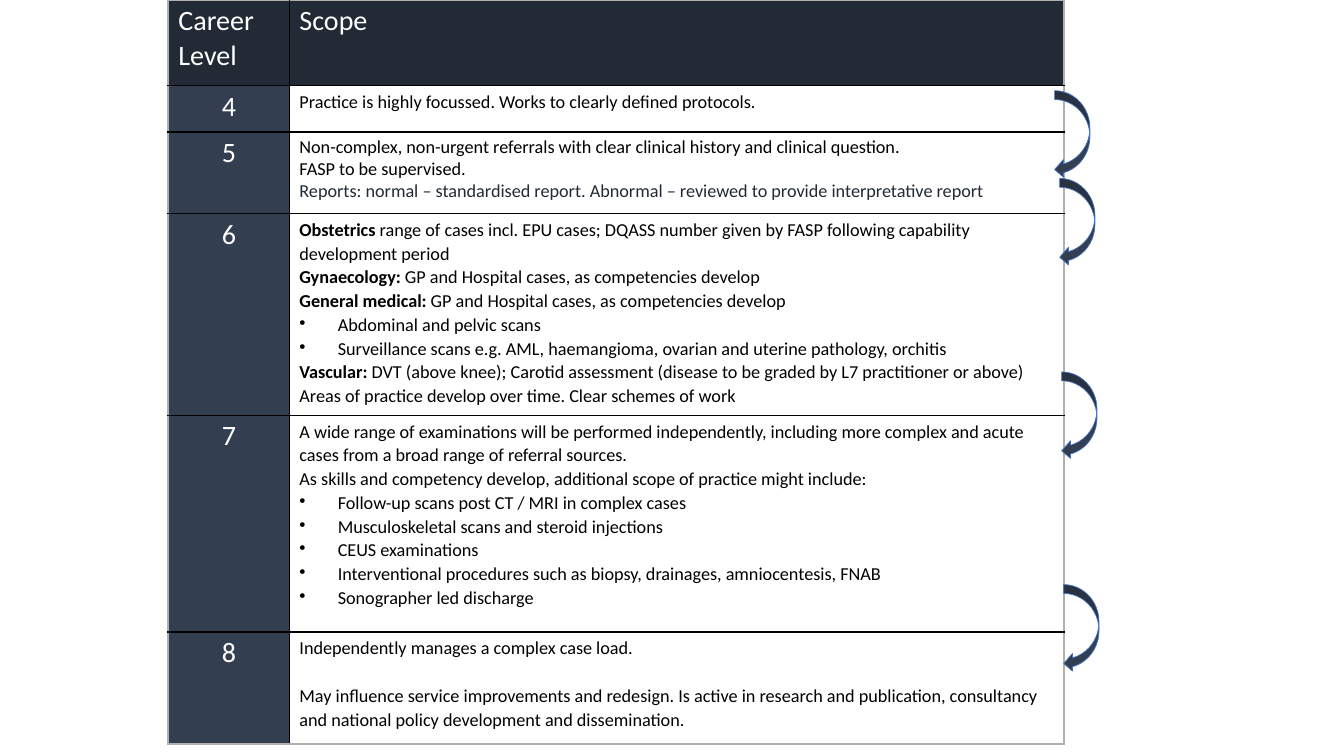
"""Build the sonographer career level and scope slide."""
from lxml import etree
from pptx import Presentation
from pptx.dml.color import RGBColor
from pptx.enum.shapes import MSO_SHAPE
from pptx.enum.text import PP_ALIGN
from pptx.oxml.ns import qn
from pptx.util import Inches, Pt

FONT, HEAD_SIZE, BODY_SIZE = "Calibri", 20, 13
HEADER, LEVEL, FRAME, RULE = "222A35", "333F50", "B0B0B0", "000000"
WHITE, BLACK, ARROW_LINE = "FFFFFF", "000000", "4472C4"
PLAIN, BULLET, TINTED, SPACED = "plain", "bullet", "tinted", "spaced"

HEADINGS = ("Career Level", "Scope")
SCOPES = [
    ("4", 1.07, [
        (PLAIN, "", "Practice is highly focussed. Works to clearly defined protocols."),
    ]),
    ("5", 1.0, [
        (PLAIN, "", "Non-complex, non-urgent referrals with clear clinical history and clinical question."),
        (PLAIN, "", "FASP to be supervised."),
        (TINTED, "", "Reports: normal – standardised report. Abnormal – reviewed to provide interpretative report"),
    ]),
    ("6", 1.07, [
        (PLAIN, "Obstetrics ", "range of cases incl. EPU cases; DQASS number given by FASP "
                               "following capability development period"),
        (PLAIN, "Gynaecology: ", "GP and Hospital cases, as competencies develop"),
        (PLAIN, "General medical: ", "GP and Hospital cases, as competencies develop"),
        (BULLET, "", "Abdominal and pelvic scans"),
        (BULLET, "", "Surveillance scans e.g. AML, haemangioma, ovarian and uterine pathology, orchitis"),
        (PLAIN, "Vascular: ", "DVT (above knee); Carotid assessment (disease to be graded by L7 "
                              "practitioner or above)"),
        (PLAIN, "", "Areas of practice develop over time. Clear schemes of work"),
    ]),
    ("7", 1.07, [
        (PLAIN, "", "A wide range of examinations will be performed independently, including more "
                    "complex and acute cases from a broad range of referral sources."),
        (PLAIN, "", "As skills and competency develop, additional scope of practice might include:"),
        (BULLET, "", "Follow-up scans post CT / MRI in complex cases"),
        (BULLET, "", "Musculoskeletal scans and steroid injections"),
        (BULLET, "", "CEUS examinations"),
        (BULLET, "", "Interventional procedures such as biopsy, drainages, amniocentesis, FNAB"),
        (BULLET, "", "Sonographer led discharge"),
    ]),
    ("8", 1.07, [
        (PLAIN, "", "Independently manages a complex case load."),
        (SPACED, "", "May influence service improvements and redesign. Is active in research and "
                     "publication, consultancy and national policy development and dissemination."),
    ]),
]
TABLE_LEFT, TABLE_TOP = 1.67, 0
COLUMNS = (1.2, 7.68)
ROWS = (0.85, 0.46, 0.81, 2, 2.15, 1.11)
ARROW_SIZE = (0.35, 0.87)
PROGRESSIONS = [(10.51, 1.77), (10.55, 5.8), (10.53, 3.69), (10.46, 0.9)]


def rgb(value):
    return RGBColor.from_string(value)


def add_run(paragraph, text, size, color, bold=False):
    run = paragraph.add_run()
    run.text = text
    run.font.name, run.font.size, run.font.bold = FONT, Pt(size), bold
    run.font.color.rgb = rgb(color)


def add_bullet(paragraph):
    properties = paragraph._p.get_or_add_pPr()
    properties.set("marL", str(Inches(0.38)))
    properties.set("indent", str(-Inches(0.38)))
    etree.SubElement(properties, qn("a:buChar"), char="•")


def draw_borders(cell, row, column):
    outer = {"L": column == 0, "R": column == len(COLUMNS) - 1,
             "T": row == 0, "B": row == len(ROWS) - 1}
    properties = cell._tc.get_or_add_tcPr()
    for side, framed in outer.items():
        width = Pt(1.5 if framed else 1)
        border = etree.SubElement(properties, qn(f"a:ln{side}"), w=str(width))
        fill = etree.SubElement(border, qn("a:solidFill"))
        etree.SubElement(fill, qn("a:srgbClr"), val=FRAME if framed else RULE)


def paint(cell, color):
    cell.fill.solid()
    cell.fill.fore_color.rgb = rgb(color)


def write_scope(cell, spacing, lines):
    frame = cell.text_frame
    for index, (kind, lead, text) in enumerate(lines):
        paragraph = frame.add_paragraph() if index else frame.paragraphs[0]
        if kind == BULLET:
            add_bullet(paragraph)
        if kind == SPACED:
            paragraph.space_before = Pt(17)
        paragraph.line_spacing = spacing
        if lead:
            add_run(paragraph, lead, BODY_SIZE, BLACK, bold=True)
        add_run(paragraph, text, BODY_SIZE, HEADER if kind == TINTED else BLACK)


def add_scope_table(slide):
    table = slide.shapes.add_table(
        len(ROWS), len(COLUMNS), Inches(TABLE_LEFT), Inches(TABLE_TOP),
        Inches(sum(COLUMNS)), Inches(sum(ROWS))).table
    for column, width in zip(table.columns, COLUMNS):
        column.width = Inches(width)
    for row, height in zip(table.rows, ROWS):
        row.height = Inches(height)
    for row in range(len(ROWS)):
        for column in range(len(COLUMNS)):
            cell = table.cell(row, column)
            cell.margin_left = cell.margin_right = Inches(0.1)
            cell.margin_top = cell.margin_bottom = Inches(0.04)
            draw_borders(cell, row, column)
    for column, heading in enumerate(HEADINGS):
        cell = table.cell(0, column)
        paint(cell, HEADER)
        add_run(cell.text_frame.paragraphs[0], heading, HEAD_SIZE, WHITE)
    for row, (level, spacing, lines) in enumerate(SCOPES, start=1):
        level_cell, scope_cell = table.cell(row, 0), table.cell(row, 1)
        paint(level_cell, LEVEL)
        paint(scope_cell, WHITE)
        number = level_cell.text_frame.paragraphs[0]
        number.alignment = PP_ALIGN.CENTER
        add_run(number, level, HEAD_SIZE, WHITE)
        write_scope(scope_cell, spacing, lines)


def add_progression(slide, left, top):
    arrow = slide.shapes.add_shape(
        MSO_SHAPE.CURVED_LEFT_ARROW, Inches(left), Inches(top), *map(Inches, ARROW_SIZE))
    arrow.shadow.inherit = False
    arrow.fill.solid()
    arrow.fill.fore_color.rgb = rgb(LEVEL)
    arrow.line.color.rgb = rgb(ARROW_LINE)
    arrow.line.width = Pt(0.5)


def main():
    deck = Presentation()
    deck.slide_width, deck.slide_height = Inches(13.33), Inches(7.5)
    slide = deck.slides.add_slide(deck.slide_layouts[6])
    add_scope_table(slide)
    for left, top in PROGRESSIONS:
        add_progression(slide, left, top)
    deck.save("out.pptx")


if __name__ == "__main__":
    main()
